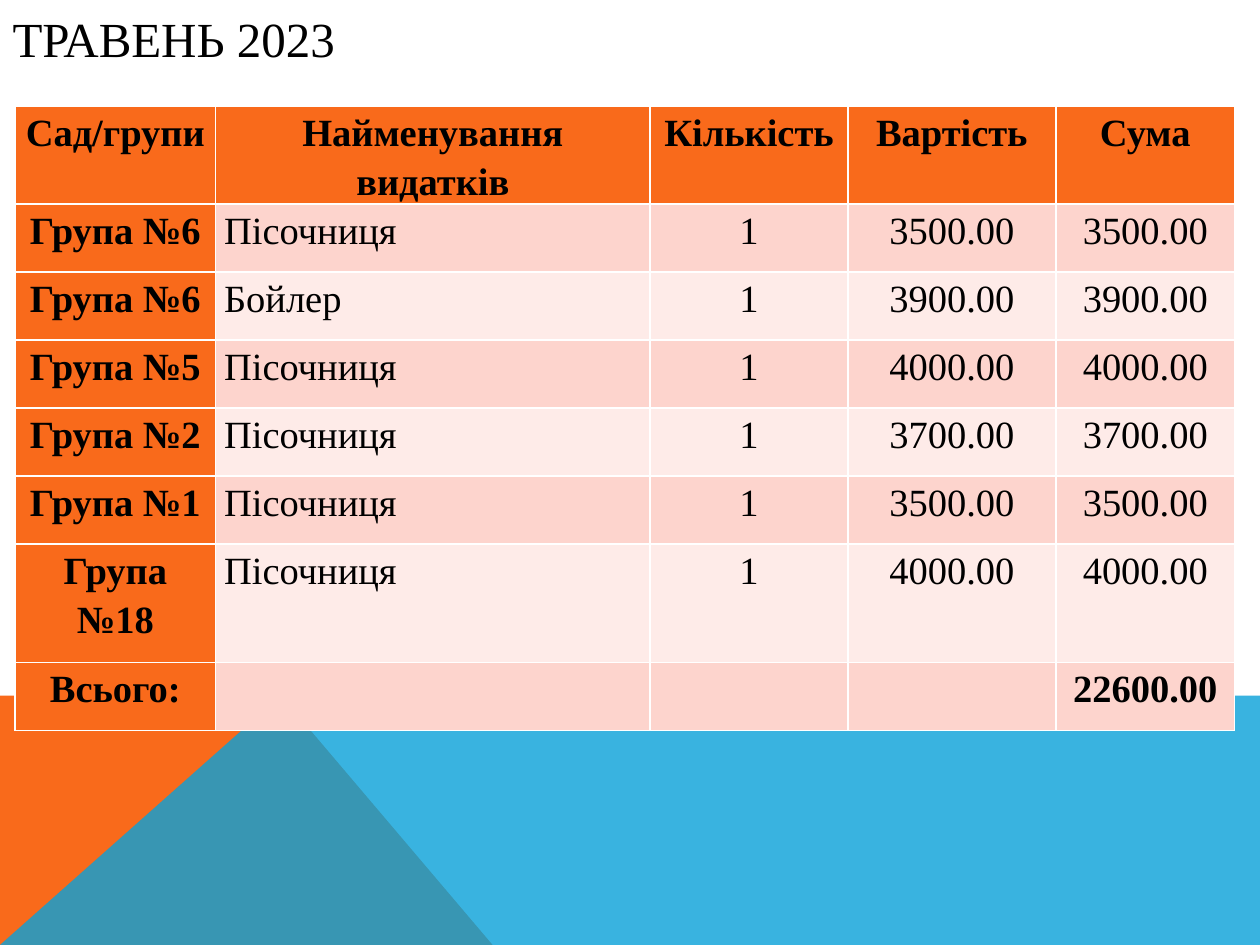
from lxml.etree import SubElement
from pptx import Presentation
from pptx.dml.color import RGBColor
from pptx.enum.text import MSO_ANCHOR, PP_ALIGN
from pptx.oxml.ns import qn
from pptx.util import Inches, Pt

FONT = "Times New Roman"
BLACK = RGBColor(0x00, 0x00, 0x00)
ORANGE = RGBColor(0xF9, 0x6A, 0x1B)
BLUE = RGBColor(0x08, 0xA1, 0xD9)
BANDS = (RGBColor(0xFD, 0xD4, 0xCD), RGBColor(0xFE, 0xEB, 0xE8))

HEADINGS = ("Сад/групи", "Найменування видатків", "Кількість", "Вартість", "Сума")
PURCHASES = (
    ("Група №6", "Пісочниця", 3500),
    ("Група №6", "Бойлер", 3900),
    ("Група №5", "Пісочниця", 4000),
    ("Група №2", "Пісочниця", 3700),
    ("Група №1", "Пісочниця", 3500),
    ("Група №18", "Пісочниця", 4000),
)
COLUMN_WIDTHS = (1.59, 3.45, 1.57, 1.65, 1.42)
ROW_HEIGHT = 0.54
TALL_ROW, TALL_HEIGHT = 6, 0.94


def add_polygon(page, box, corners, color, opacity=None):
    """Draw a filled polygon whose corners are shares of the box."""
    left, top, width, height = box
    points = [(Inches(left + x * width), Inches(top + y * height)) for x, y in corners]
    builder = page.shapes.build_freeform(*points[0], scale=1.0)
    builder.add_line_segments(points[1:], close=True)
    shape = builder.convert_to_shape()
    shape.shadow.inherit = False
    shape.line.fill.background()
    shape.fill.solid()
    shape.fill.fore_color.rgb = color
    if opacity is not None:
        tint = shape.element.spPr.find(qn("a:solidFill"))[0]
        SubElement(tint, qn("a:alpha")).set("val", str(opacity * 1000))


def add_backdrop(page, box):
    """Draw the two overlapping colour fields along the foot of the slide."""
    peak = 0.223
    add_polygon(page, box, ((0, 1), (0, 0), (peak, 0), (0.391, 1)), ORANGE)
    add_polygon(page, box, ((0, 1), (peak, 0), (1, 0), (1, 1)), BLUE, opacity=80)


def add_title(page, box, text):
    """Place the title placeholder in the box, above the backdrop."""
    title = page.shapes.title
    title.left, title.top, title.width, title.height = map(Inches, box)
    frame = title.text_frame
    frame.text = text
    frame.vertical_anchor = MSO_ANCHOR.MIDDLE
    para = frame.paragraphs[0]
    para.alignment = PP_ALIGN.LEFT
    para.font.size = Pt(28)
    para.font.name = FONT
    para.font.color.rgb = BLACK
    title.element.getparent().append(title.element)


def fill_cell(cell, text, color, bold, alignment):
    """Set the fill, margins and text of one table cell."""
    cell.fill.solid()
    cell.fill.fore_color.rgb = color
    cell.margin_left = cell.margin_right = Inches(0.07)
    cell.margin_top = cell.margin_bottom = 0
    para = cell.text_frame.paragraphs[0]
    para.alignment = alignment
    para.line_spacing = 1.15
    para.font.size = Pt(22)
    para.font.name = FONT
    para.font.bold = bold
    para.font.color.rgb = BLACK
    if text:
        para.add_run().text = text


def expense_rows():
    """Return the table text, with the heading and the total."""
    rows = [HEADINGS]
    for group, item, price in PURCHASES:
        rows.append((group, item, "1", f"{price:.2f}", f"{price:.2f}"))
    total = sum(price for _, _, price in PURCHASES)
    return rows + [("Всього:", "", "", "", f"{total:.2f}")]


def add_expenses(page, box):
    """Build the expense table in the box."""
    rows = expense_rows()
    last = len(rows) - 1
    frame = page.shapes.add_table(len(rows), len(HEADINGS), *map(Inches, box))
    table = frame.table
    table.first_col = True
    for column, width in zip(table.columns, COLUMN_WIDTHS):
        column.width = Inches(width)
    for r, texts in enumerate(rows):
        table.rows[r].height = Inches(TALL_HEIGHT if r == TALL_ROW else ROW_HEIGHT)
        for c, text in enumerate(texts):
            heading = r == 0 or c == 0
            color = ORANGE if heading else BANDS[(r - 1) % 2]
            alignment = PP_ALIGN.LEFT if c == 1 and r > 0 else PP_ALIGN.CENTER
            fill_cell(table.cell(r, c), text, color, heading or r == last, alignment)


def main():
    """Build and save the deck."""
    deck = Presentation()
    deck.slide_width, deck.slide_height = Inches(10), Inches(7.5)
    page = deck.slides.add_slide(deck.slide_layouts[5])
    add_backdrop(page, (0, 5.52, 10, 1.98))
    add_title(page, (0, 0, 3.39, 0.6), "ТРАВЕНЬ 2023")
    add_expenses(page, (0.12, 0.84, 9.69, 5.02))
    deck.save("out.pptx")


if __name__ == "__main__":
    main()
